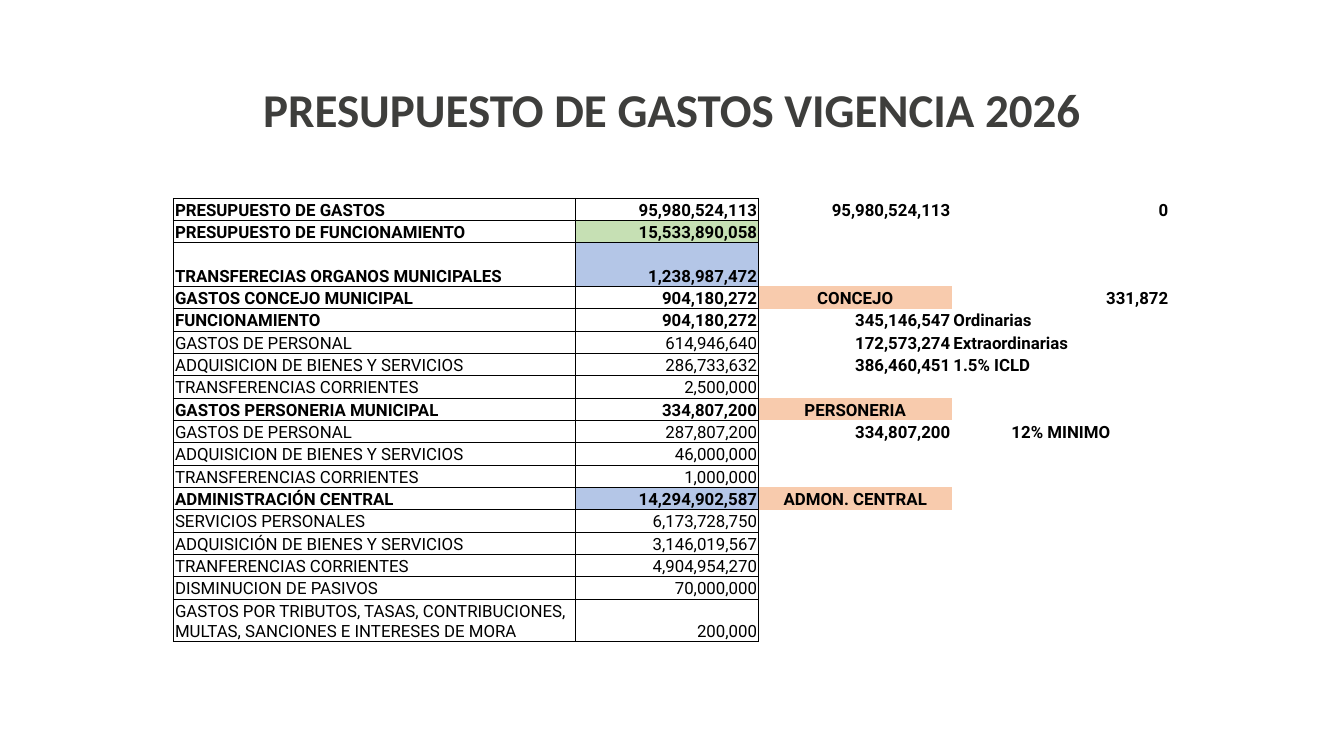
"""Build the 2026 spending budget slide."""
from lxml.etree import SubElement
from pptx import Presentation
from pptx.dml.color import RGBColor
from pptx.enum.text import MSO_ANCHOR, PP_ALIGN
from pptx.oxml.ns import qn
from pptx.util import Pt

LEFT, MID, RIGHT = PP_ALIGN.LEFT, PP_ALIGN.CENTER, PP_ALIGN.RIGHT
BLACK, WHITE, GREEN, BLUE, PEACH = "000000", "FFFFFF", "C6E0B4", "B4C6E7", "F8CBAD"
TITLE = "PRESUPUESTO DE GASTOS VIGENCIA 2026"
ROWS = [
    ("PRESUPUESTO DE GASTOS", "95,980,524,113", "95,980,524,113", "0"),
    ("PRESUPUESTO DE FUNCIONAMIENTO", "15,533,890,058", "", ""),
    ("TRANSFERECIAS ORGANOS MUNICIPALES", "1,238,987,472", "", ""),
    ("GASTOS CONCEJO MUNICIPAL", "904,180,272", "CONCEJO", "331,872"),
    ("FUNCIONAMIENTO", "904,180,272", "345,146,547", "Ordinarias"),
    ("GASTOS DE PERSONAL", "614,946,640", "172,573,274", "Extraordinarias"),
    ("ADQUISICION DE BIENES Y SERVICIOS", "286,733,632", "386,460,451", "1.5% ICLD"),
    ("TRANSFERENCIAS CORRIENTES", "2,500,000", "", ""),
    ("GASTOS PERSONERIA MUNICIPAL", "334,807,200", "PERSONERIA", ""),
    ("GASTOS DE PERSONAL", "287,807,200", "334,807,200", "12% MINIMO"),
    ("ADQUISICION DE BIENES Y SERVICIOS", "46,000,000", "", ""),
    ("TRANSFERENCIAS CORRIENTES", "1,000,000", "", ""),
    ("ADMINISTRACIÓN CENTRAL", "14,294,902,587", "ADMON. CENTRAL", ""),
    ("SERVICIOS PERSONALES", "6,173,728,750", "", ""),
    ("ADQUISICIÓN DE BIENES Y SERVICIOS", "3,146,019,567", "", ""),
    ("TRANFERENCIAS CORRIENTES", "4,904,954,270", "", ""),
    ("DISMINUCION DE PASIVOS", "70,000,000", "", ""),
    ("GASTOS POR TRIBUTOS, TASAS, CONTRIBUCIONES, MULTAS, SANCIONES E INTERESES DE MORA",
     "200,000", "", ""),
]
BOLD = {0, 1, 2, 3, 4, 8, 12}
FILLS = {(1, 1): GREEN, (2, 1): BLUE, (12, 1): BLUE,
         (3, 2): PEACH, (8, 2): PEACH, (12, 2): PEACH}
ALIGN = {(3, 2): MID, (8, 2): MID, (12, 2): MID, (9, 3): MID,
         (4, 3): LEFT, (5, 3): LEFT, (6, 3): LEFT}
WIDTHS = [215.5, 98, 103.5, 116.8]
HIGH = {2: 23.3, 17: 22}
ROW = 11.97
HEAD = {"name": "Calibri", "size": Pt(25.2), "bold": True}
BODY = {"name": "Roboto", "size": Pt(9)}
CELL = {"margin_left": Pt(0.9), "margin_right": Pt(0.9), "margin_top": Pt(0.9),
        "margin_bottom": 0, "vertical_anchor": MSO_ANCHOR.BOTTOM}
FRAME = {"word_wrap": True, "vertical_anchor": MSO_ANCHOR.MIDDLE}


def tint(code):
    return RGBColor.from_string(code)


def apply(item, form):
    for key, val in form.items():
        setattr(item, key, val)


def write(para, text, form, shade, align):
    para.alignment = align
    if not text:
        SubElement(para._p, qn("a:endParaRPr"), sz=str(int(form["size"].pt * 100)))
        return
    run = para.add_run()
    run.text = text
    apply(run.font, form)
    run.font.color.rgb = tint(shade)


def edge(cell, col):
    drawn = {"L", "R", "T", "B"} if col < 2 else {"L"} if col == 2 else set()
    props = cell._tc.get_or_add_tcPr()
    for side in "LRTB":
        line = SubElement(props, qn("a:ln" + side), w=str(Pt(0.5)))
        if side in drawn:
            SubElement(SubElement(line, qn("a:solidFill")), qn("a:srgbClr"), val=BLACK)
        else:
            SubElement(line, qn("a:noFill"))


def main():
    deck = Presentation()
    deck.slide_width, deck.slide_height = Pt(720), Pt(405)
    slide = deck.slides.add_slide(deck.slide_layouts[6])

    frame = slide.shapes.add_textbox(Pt(24.5), Pt(35.5), Pt(671), Pt(45)).text_frame
    apply(frame, FRAME)
    write(frame.paragraphs[0], TITLE, HEAD, "3E3E3C", MID)

    highs = [HIGH.get(row, ROW) for row in range(len(ROWS))]
    table = slide.shapes.add_table(len(ROWS), len(WIDTHS), Pt(92.9), Pt(106.2),
                                   Pt(sum(WIDTHS)), Pt(sum(highs))).table
    apply(table, {"first_row": False, "horz_banding": False})
    for part, width in zip(table.columns, WIDTHS):
        part.width = Pt(width)
    for part, high in zip(table.rows, highs):
        part.height = Pt(high)

    for row, texts in enumerate(ROWS):
        for col, text in enumerate(texts):
            cell = table.cell(row, col)
            apply(cell, CELL)
            edge(cell, col)
            cell.fill.solid()
            cell.fill.fore_color.rgb = tint(FILLS.get((row, col), WHITE))
            align = ALIGN.get((row, col), RIGHT if col else LEFT)
            form = BODY | {"bold": col > 1 or row in BOLD}
            write(cell.text_frame.paragraphs[0], text, form, BLACK, align)

    deck.save("out.pptx")


if __name__ == "__main__":
    main()
